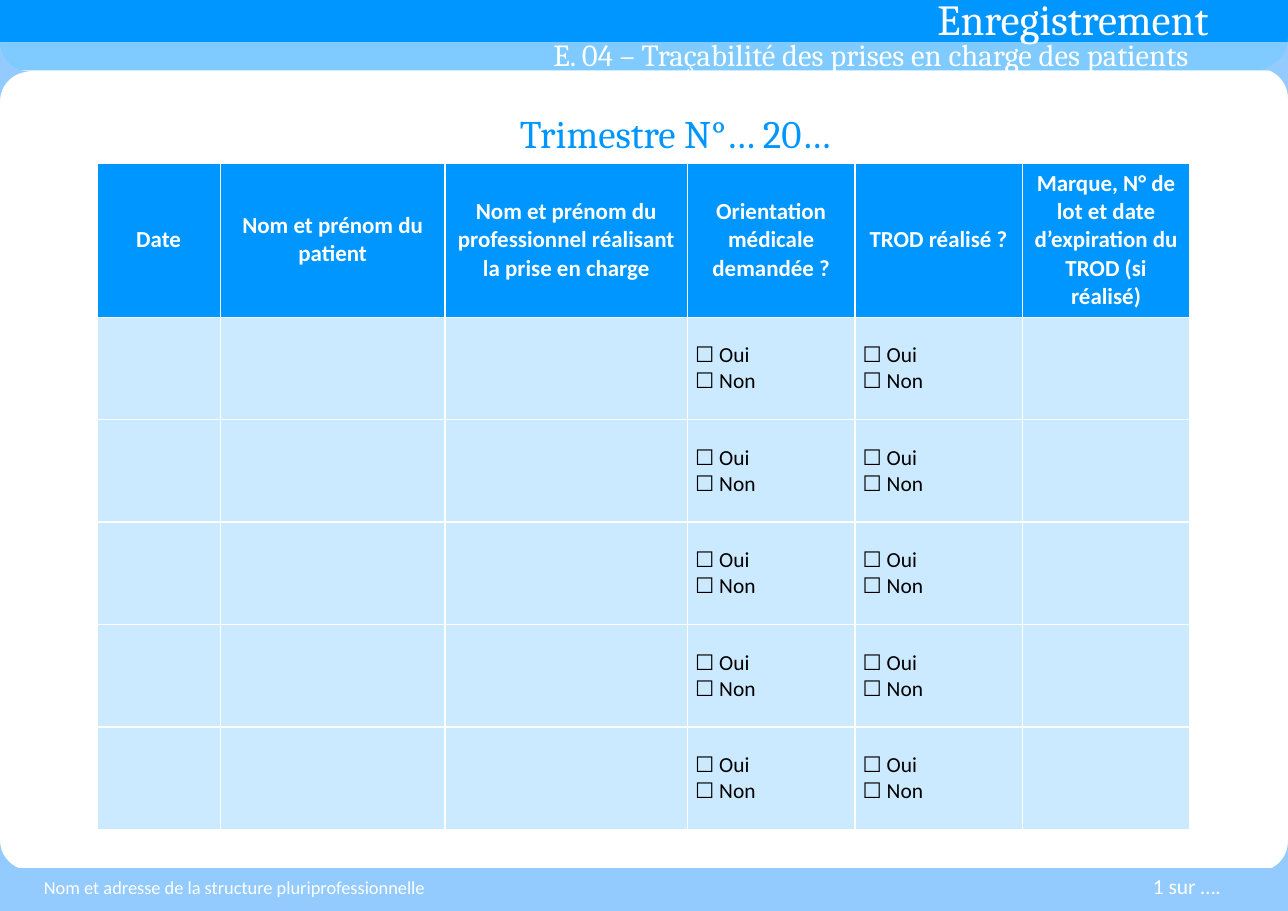
from dataclasses import dataclass

from lxml import etree
from pptx import Presentation
from pptx.dml.color import RGBColor
from pptx.enum.shapes import MSO_SHAPE
from pptx.enum.text import MSO_ANCHOR, MSO_AUTO_SIZE, PP_ALIGN
from pptx.oxml.ns import qn
from pptx.util import Pt

RECT, PLAQUE = MSO_SHAPE.RECTANGLE, MSO_SHAPE.PLAQUE
LEFT, CENTER, RIGHT = PP_ALIGN.LEFT, PP_ALIGN.CENTER, PP_ALIGN.RIGHT
TOP, MIDDLE = MSO_ANCHOR.TOP, MSO_ANCHOR.MIDDLE
NO_FIT = MSO_AUTO_SIZE.NONE
SCALE = 9144


@dataclass(frozen=True)
class Theme:
    blue: str = "0096FF"
    pale: str = "93CBFF"
    white: str = "FFFFFF"
    black: str = "000000"
    serif: str = "Cambria"
    sans: str = "Calibri"
    banner: float = 28
    period: float = 25.5
    title: float = 20
    head: float = 15
    body: float = 14
    foot: float = 12


def px(*sizes):
    return [size * SCALE for size in sizes]


class Page:
    def __init__(self, slide, theme):
        self.slide = slide
        self.theme = theme

    def paint(self, fill, color, alpha=100):
        fill.solid()
        fill.fore_color.rgb = RGBColor.from_string(color)
        if alpha < 100:
            node = fill._xPr.find(qn("a:solidFill"))[0]
            etree.SubElement(node, qn("a:alpha")).set("val", str(alpha * 1000))

    def shape(self, kind, box, color, alpha=100):
        item = self.slide.shapes.add_shape(kind, *px(*box))
        item.shadow.inherit = False
        item.line.fill.background()
        self.paint(item.fill, color, alpha)
        return item

    def plaque(self, box, color):
        self.shape(PLAQUE, box, color).adjustments[0] = 0.5

    def style(self, frame, text, font, size, color, align=LEFT, bold=False, line=None):
        frame.word_wrap = True
        frame.text = text
        for para in frame.paragraphs:
            para.alignment = align
            para.line_spacing = line
            para.font.name = font
            para.font.size = Pt(size)
            para.font.bold = bold
            para.font.color.rgb = RGBColor.from_string(color)

    def text(self, box, text, font, size, color, align=LEFT, anchor=TOP, line=None, inset=10):
        frame = self.slide.shapes.add_textbox(*px(*box)).text_frame
        frame.vertical_anchor = anchor
        frame.margin_left = inset * SCALE
        self.style(frame, text, font, size, color, align, line=line)

    def title(self, box, text):
        item = self.slide.shapes.title
        self.slide.shapes._spTree.append(item._element)
        item.left, item.top, item.width, item.height = px(*box)
        frame = item.text_frame
        frame.auto_size = NO_FIT
        frame.vertical_anchor = MIDDLE
        look = self.theme
        self.style(frame, text, look.serif, look.title, look.white, RIGHT, line=0.9)

    def cell(self, cell, text, head):
        look = self.theme
        cell.vertical_anchor = MIDDLE
        cell.margin_left = cell.margin_right = 7 * SCALE
        cell.margin_top = cell.margin_bottom = 0
        self.paint(cell.fill, look.blue, 100 if head else 20)
        if head:
            self.style(cell.text_frame, text, look.sans, look.head, look.white, CENTER, True)
        elif text:
            self.style(cell.text_frame, text, look.sans, look.body, look.black)

    def table(self, left, top, widths, heights, rows):
        box = px(left, top, sum(widths), sum(heights))
        grid = self.slide.shapes.add_table(len(rows), len(widths), *box).table
        grid.horz_banding = False
        for col, width in zip(grid.columns, px(*widths)):
            col.width = width
        for row, height in zip(grid.rows, px(*heights)):
            row.height = height
        for i, row in enumerate(rows):
            for j, text in enumerate(row):
                self.cell(grid.cell(i, j), text, i == 0)


def main():
    deck = Presentation()
    deck.slide_width, deck.slide_height = px(1169, 827)
    look = Theme()
    page = Page(deck.slides.add_slide(deck.slide_layouts[5]), look)

    page.shape(RECT, (0, 34, 1169, 30), look.blue, 50)
    page.shape(RECT, (0, 0, 1169, 38), look.blue)
    page.shape(RECT, (0, 788, 1169, 39), look.pale)
    for left, top in ((-90, 38), (1142, 35), (-90, 763), (1142, 764)):
        page.plaque((left, top, 117, 54), look.pale)

    page.text((841, -12, 282, 57), "Enregistrement", look.serif, look.banner, look.white)
    page.title((218, 37, 871, 28), "E. 04 – Traçabilité des prises en charge des patients")
    page.text((80, 99, 1008, 49), "Trimestre N°… 20…", look.serif, look.period,
              look.blue, CENTER, line=0.9, inset=68)
    page.text((862, 793, 256, 22), "1 sur ….", look.sans, look.body,
              look.white, RIGHT, MIDDLE)

    heads = [
        "Date",
        "Nom et prénom du patient",
        "Nom et prénom du professionnel réalisant la prise en charge",
        "Orientation médicale demandée ?",
        "TROD réalisé ?",
        "Marque, N° de lot et date d’expiration du TROD (si réalisé)",
    ]
    choice = "☐ Oui\n☐ Non"
    entry = ["", "", "", choice, choice, ""]
    page.table(88, 148, [112, 204, 220, 152, 152, 152], [140] + [93] * 5,
               [heads] + [entry] * 5)

    page.text((30, 793, 375, 35), "Nom et adresse de la structure pluriprofessionnelle",
              look.sans, look.foot, look.white, line=0.9)
    deck.save("out.pptx")


if __name__ == "__main__":
    main()
